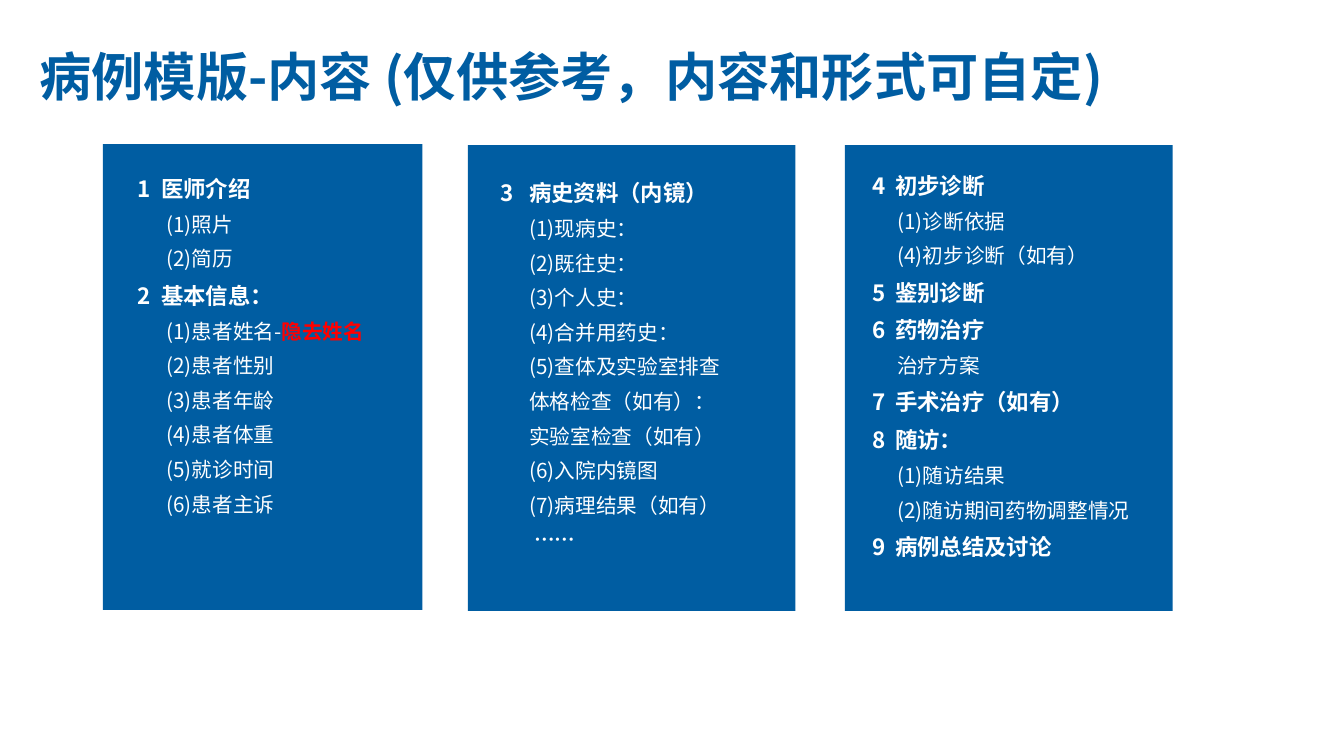
from dataclasses import dataclass
from lxml.etree import SubElement
from pptx import Presentation
from pptx.dml.color import RGBColor
from pptx.enum.shapes import MSO_SHAPE
from pptx.enum.text import MSO_ANCHOR, MSO_AUTO_SIZE, PP_ALIGN
from pptx.oxml.ns import qn
from pptx.util import Inches, Pt

TITLE = "病例模版-内容 (仅供参考，内容和形式可自定)"
HEADING, ITEM, MORE = "heading", "item", "more"
CARDS = [
    {
        "area": (1.02, 1.43, 3.17), "text_at": (1.36, 1.63),
        "indents": {HEADING: 0.24, ITEM: 0.29},
        "lines": [
            (HEADING, "1\t医师介绍"),
            (ITEM, "(1)照片"),
            (ITEM, "(2)简历"),
            (HEADING, "2\t基本信息："),
            (ITEM, "(1)患者姓名-", "隐去姓名"),
            (ITEM, "(2)患者性别"),
            (ITEM, "(3)患者年龄"),
            (ITEM, "(4)患者体重"),
            (ITEM, "(5)就诊时间"),
            (ITEM, "(6)患者主诉"),
        ],
    },
    {
        "area": (4.64, 1.44, 3.25), "text_at": (4.96, 1.67),
        "indents": {HEADING: 0.29, ITEM: 0.29, MORE: 0.34},
        "lines": [
            (HEADING, "3\t病史资料（内镜）"),
            (ITEM, "(1)现病史："),
            (ITEM, "(2)既往史："),
            (ITEM, "(3)个人史："),
            (ITEM, "(4)合并用药史："),
            (ITEM, "(5)查体及实验室排查"),
            (ITEM, "体格检查（如有）："),
            (ITEM, "实验室检查（如有）"),
            (ITEM, "(6)入院内镜图"),
            (ITEM, "(7)病理结果（如有）"),
            (MORE, "……"),
        ],
    },
    {
        "area": (8.38, 1.44, 3.25), "text_at": (8.65, 1.60),
        "indents": {HEADING: 0.23, ITEM: 0.25},
        "lines": [
            (HEADING, "4\t初步诊断"),
            (ITEM, "(1)诊断依据"),
            (ITEM, "(4)初步诊断（如有）"),
            (HEADING, "5\t鉴别诊断"),
            (HEADING, "6\t药物治疗"),
            (ITEM, "治疗方案"),
            (HEADING, "7\t手术治疗（如有）"),
            (HEADING, "8\t随访："),
            (ITEM, "(1)随访结果"),
            (ITEM, "(2)随访期间药物调整情况"),
            (HEADING, "9\t病例总结及讨论"),
        ],
    },
]
CARD_HEIGHT = 4.62


@dataclass(frozen=True)
class Theme:
    font: str = "Noto Sans CJK SC"
    blue: str = "005DA2"
    white: str = "FFFFFF"
    red: str = "FF0000"
    title_size: float = 37.3
    heading_size: float = 16
    item_size: float = 14.7
    line_spacing: float = 1.4


THEME = Theme()


def add_text(paragraph, text, *, size, color, bold=False):
    run = paragraph.add_run()
    run.text = text
    run.font.name = THEME.font
    run.font.size = Pt(size)
    run.font.bold = bold
    run.font.color.rgb = RGBColor.from_string(color)
    SubElement(run.font._element, qn("a:ea"), typeface=THEME.font)


def add_title(slide):
    title = slide.shapes.title
    title.left, title.top = Inches(0.29), Inches(0.38)
    title.width, title.height = Inches(11.03), Inches(0.74)
    frame = title.text_frame
    frame.word_wrap = True
    frame.auto_size = MSO_AUTO_SIZE.NONE
    frame.vertical_anchor = MSO_ANCHOR.MIDDLE
    paragraph = frame.paragraphs[0]
    paragraph.alignment = PP_ALIGN.LEFT
    add_text(paragraph, TITLE, size=THEME.title_size, color=THEME.blue, bold=True)


def add_card(slide, card):
    left, top, width = card["area"]
    panel = slide.shapes.add_shape(
        MSO_SHAPE.RECTANGLE, Inches(left), Inches(top), Inches(width), Inches(CARD_HEIGHT))
    panel.shadow.inherit = False
    panel.fill.solid()
    panel.fill.fore_color.rgb = RGBColor.from_string(THEME.blue)
    panel.line.fill.background()

    text_left, text_top = card["text_at"]
    text_box = slide.shapes.add_textbox(
        Inches(text_left), Inches(text_top),
        Inches(left + width - text_left), Inches(top + CARD_HEIGHT - text_top))
    frame = text_box.text_frame
    frame.word_wrap = True
    frame.margin_left = frame.margin_right = frame.margin_top = frame.margin_bottom = 0
    for index, (kind, text, *warnings) in enumerate(card["lines"]):
        paragraph = frame.add_paragraph() if index else frame.paragraphs[0]
        paragraph.line_spacing = THEME.line_spacing
        indent = Inches(card["indents"][kind])
        properties = paragraph._p.get_or_add_pPr()
        properties.set("marL", str(indent))
        properties.set("indent", str(-indent if kind == HEADING else 0))
        size = THEME.heading_size if kind == HEADING else THEME.item_size
        add_text(paragraph, text, size=size, color=THEME.white, bold=kind != ITEM)
        for warning in warnings:
            add_text(paragraph, warning, size=size, color=THEME.red, bold=True)


def main():
    presentation = Presentation()
    presentation.slide_width, presentation.slide_height = Inches(13.33), Inches(7.5)
    slide = presentation.slides.add_slide(presentation.slide_layouts[5])
    add_title(slide)
    for card in CARDS:
        add_card(slide, card)
    presentation.save("out.pptx")


if __name__ == "__main__":
    main()
